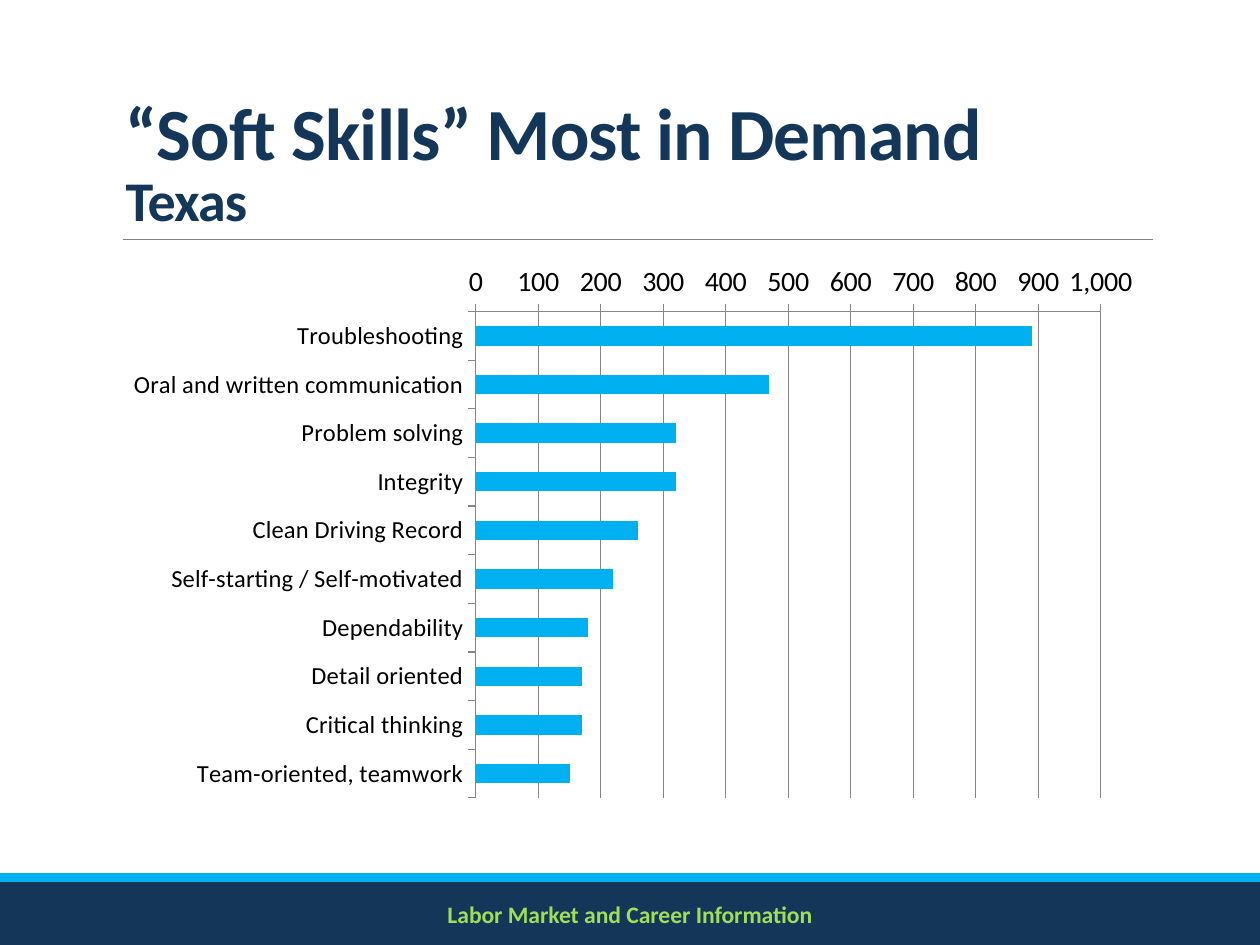
from lxml import etree
from pptx import Presentation
from pptx import util as u
from pptx.chart.data import CategoryChartData
from pptx.dml.color import RGBColor
from pptx.enum import chart as ch, shapes, text
from pptx.oxml.ns import qn

PX_PER_INCH = 126
FONT = "Calibri"
COLORS = {
    "navy": "133659",
    "blue": "00B0F0",
    "green": "9FDF58",
    "rule": "808080",
    "axis": "878787",
    "black": "000000",
}
SKILLS = {
    "Troubleshooting": 890,
    "Oral and written communication": 470,
    "Problem solving": 320,
    "Integrity": 320,
    "Clean Driving Record": 260,
    "Self-starting / Self-motivated": 220,
    "Dependability": 180,
    "Detail oriented": 170,
    "Critical thinking": 170,
    "Team-oriented, teamwork": 150,
}


def px(*lengths):
    return [u.Inches(length / PX_PER_INCH) for length in lengths]


def color(name):
    return RGBColor.from_string(COLORS[name])


def set_font(font, size, color_name, bold=False):
    font.name = FONT
    font.size = u.Pt(size)
    font.bold = bold
    font.color.rgb = color(color_name)


def add_band(slide, top, height, fill):
    band = slide.shapes.add_shape(
        shapes.MSO_SHAPE.RECTANGLE, *px(0, top, 1260, height))
    band.shadow.inherit = False
    band.fill.solid()
    band.fill.fore_color.rgb = color(fill)
    band.line.fill.background()


def add_rule(slide, left, right, y):
    rule = slide.shapes.add_connector(
        shapes.MSO_CONNECTOR.STRAIGHT, *px(left, y, right, y))
    rule.line.color.rgb = color("rule")
    rule.line.width = u.Pt(0.5)
    etree.SubElement(rule._element.spPr, qn("a:effectLst"))


def add_footer(slide, words):
    box = slide.shapes.add_textbox(*px(0, 892, 1260, 44))
    frame = box.text_frame
    frame.word_wrap = True
    frame.vertical_anchor = text.MSO_ANCHOR.MIDDLE
    para = frame.paragraphs[0]
    para.text = words
    para.alignment = text.PP_ALIGN.CENTER
    set_font(para.font, 13.5, "green", bold=True)


def fill_title(slide, heading, place):
    title = slide.shapes.title
    title.left, title.top, title.width, title.height = px(113, 39, 1040, 200)
    frame = title.text_frame
    frame.auto_size = text.MSO_AUTO_SIZE.NONE
    frame.word_wrap = True
    frame.vertical_anchor = text.MSO_ANCHOR.BOTTOM
    para = frame.paragraphs[0]
    para.alignment = text.PP_ALIGN.LEFT
    para.line_spacing = 0.85
    for words, size in ((heading, 42), (place, 32)):
        if para.runs:
            para.add_line_break()
        span = para.add_run()
        span.text = words
        set_font(span.font, size, "navy", bold=True)
        span._r.get_or_add_rPr().set("spc", "-50")


def style_axis(axis, size):
    set_font(axis.tick_labels.font, size, "black")
    axis.major_tick_mark = ch.XL_TICK_MARK.OUTSIDE
    axis.minor_tick_mark = ch.XL_TICK_MARK.NONE
    axis.format.line.color.rgb = color("axis")


def add_skills_chart(slide):
    data = CategoryChartData()
    data.categories = list(SKILLS)
    data.add_series("Series 1", list(SKILLS.values()))
    chart = slide.shapes.add_chart(
        ch.XL_CHART_TYPE.BAR_CLUSTERED, *px(113, 254, 1040, 555), data).chart
    chart.has_legend = False
    chart.has_title = False
    set_font(chart.font, 14, "black")

    plot = chart.plots[0]
    plot.gap_width = 150
    plot.vary_by_categories = False
    bars = plot.series[0].format.fill
    bars.solid()
    bars.fore_color.rgb = color("blue")

    style_axis(chart.category_axis, 14)
    chart.category_axis.reverse_order = True

    values = chart.value_axis
    style_axis(values, 16)
    values.minimum_scale, values.maximum_scale = 0, 1000
    values.major_unit = 100
    values.has_major_gridlines = True
    values.major_gridlines.format.line.color.rgb = color("axis")
    values.tick_labels.number_format = "#,##0"
    values.tick_labels.number_format_is_linked = False


def main():
    deck = Presentation()
    deck.slide_width, deck.slide_height = px(1260, 945)
    slide = deck.slides.add_slide(deck.slide_layouts.get_by_name("Title Only"))
    add_band(slide, 882, 63, "navy")
    add_band(slide, 873, 9, "blue")
    add_rule(slide, 123, 1153, 239)
    add_footer(slide, "Labor Market and Career Information")
    fill_title(slide, "“Soft Skills” Most in Demand", "Texas")
    add_skills_chart(slide)
    deck.save("out.pptx")


if __name__ == "__main__":
    main()
